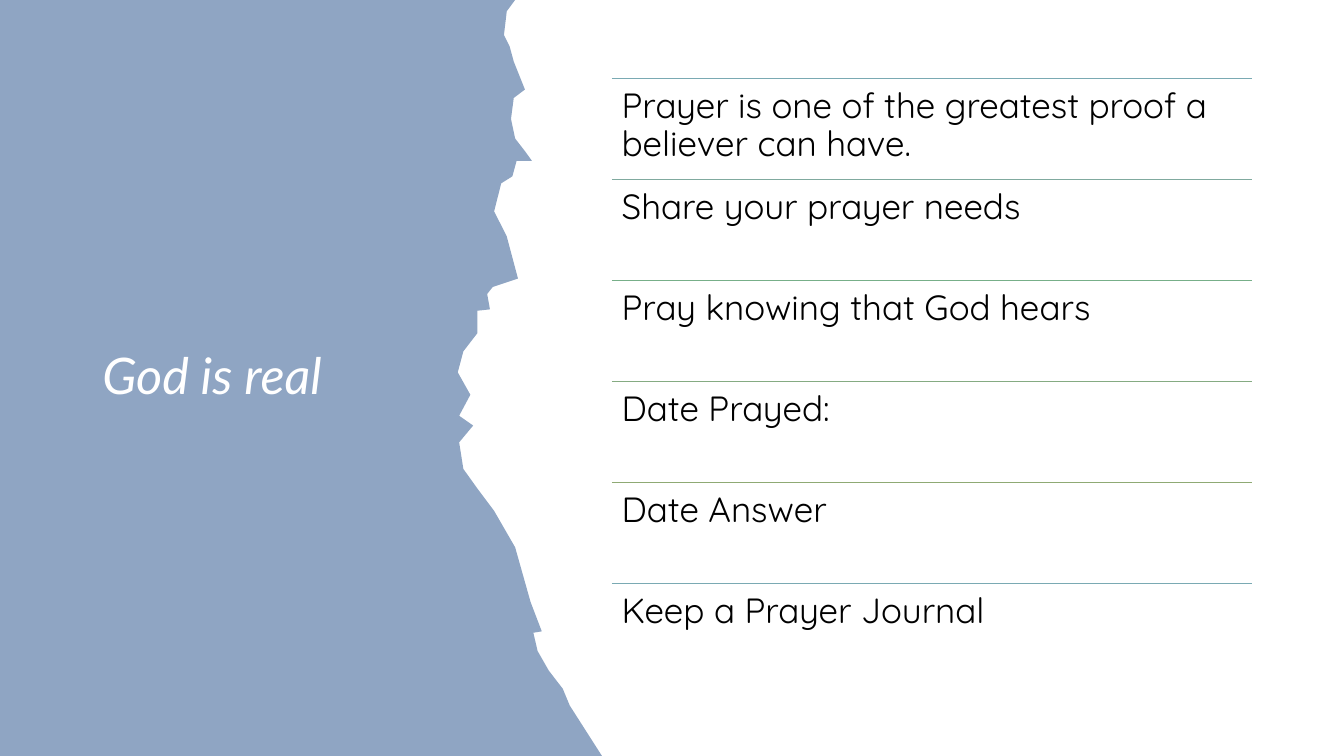
from pptx import Presentation
from pptx import util as u
from pptx.dml.color import RGBColor
from pptx.enum import shapes, text
from pptx.oxml.ns import qn
from lxml import etree

Pt = u.Pt
WIDE, HIGH = 960, 540

# Torn edge from top to bottom, in points
EDGE = [
    (368, 0), (362, 8), (360, 25), (364, 33), (367, 44), (375, 64),
    (367, 70), (365, 85), (368, 99), (375, 108), (380, 115), (369, 115),
    (366, 126), (358, 131), (353, 151), (362, 169), (370, 199), (352, 205),
    (348, 210), (350, 221), (341, 222), (341, 238), (331, 251), (327, 266),
    (336, 282), (328, 297), (338, 304), (328, 316), (331, 335), (341, 349),
    (353, 365), (368, 391), (379, 430), (387, 451), (381, 452), (384, 465),
    (392, 479), (402, 492), (407, 504), (430, 540),
]

ROWS = [
    ("Prayer is one of the greatest proof a believer can have.", "7AAAB3"),
    ("Share your prayer needs", "80AA9F"),
    ("Pray knowing that God hears", "77AF89"),
    ("Date Prayed:", "85AB82"),
    ("Date Answer", "8FAA74"),
    ("Keep a Prayer Journal", "7AAAB3"),
]


def paint(part, tint):
    """Give a fill or a font a solid colour."""
    if hasattr(part, "solid"):
        part.solid()
        part = part.fore_color
    else:
        part = part.color
    part.rgb = RGBColor.from_string(tint)


def write(slide, box, words, face, size, tint, inset, anchor):
    """Place one paragraph in the box and return it."""
    frame = slide.shapes.add_textbox(*map(Pt, box)).text_frame
    frame.word_wrap = True
    frame.vertical_anchor = anchor
    frame.margin_left = frame.margin_right = Pt(7.2)
    frame.margin_top = frame.margin_bottom = Pt(inset)
    para = frame.paragraphs[0]
    para.text = words
    para.line_spacing = 0.9
    para.font.name = face
    para.font.size = Pt(size)
    paint(para.font, tint)
    return para


def panel(slide, box, words):
    """Torn blue panel with the title, filling the height of the box."""
    left, top, high = box
    unit = high / HIGH
    dots = [(Pt(left + x * unit), Pt(top + y * unit)) for x, y in EDGE]
    pen = slide.shapes.build_freeform(Pt(left), Pt(top))
    pen.add_line_segments(dots + [(Pt(left), Pt(top + high))], close=True)
    paper = pen.convert_to_shape()
    paper.shadow.inherit = False
    paint(paper.fill, "8FA5C3")
    paper.line.fill.background()

    # Title
    area = (left + 66, top + 56, 252, high - 112)
    para = write(slide, area, words, "Lato", 36, "FFFFFF", 3.6,
                 text.MSO_ANCHOR.MIDDLE)
    para.font.italic = True


def agenda(slide, box, rows):
    """Equal rows, each under a coloured rule."""
    left, top, wide, high = box
    step = high / len(rows)
    for i, (words, tint) in enumerate(rows):
        y = top + i * step
        rule = slide.shapes.add_connector(
            shapes.MSO_CONNECTOR.STRAIGHT, Pt(left), Pt(y), Pt(left + wide), Pt(y))
        rule.line.width = Pt(1)
        paint(rule.line.fill, tint)
        etree.SubElement(rule._element.spPr, qn("a:effectLst"))
        write(slide, (left, y, wide, step), words, "Quicksand", 25, "000000",
              7.2, text.MSO_ANCHOR.TOP)


def main():
    deck = Presentation()
    deck.slide_width, deck.slide_height = Pt(WIDE), Pt(HIGH)
    slide = deck.slides.add_slide(deck.slide_layouts[6])
    paint(slide.background.fill, "FFFFFF")
    panel(slide, (0, 0, HIGH), "God is real")
    agenda(slide, (437, 56.1, 457.2, 432.6), ROWS)
    deck.save("out.pptx")


if __name__ == "__main__":
    main()
